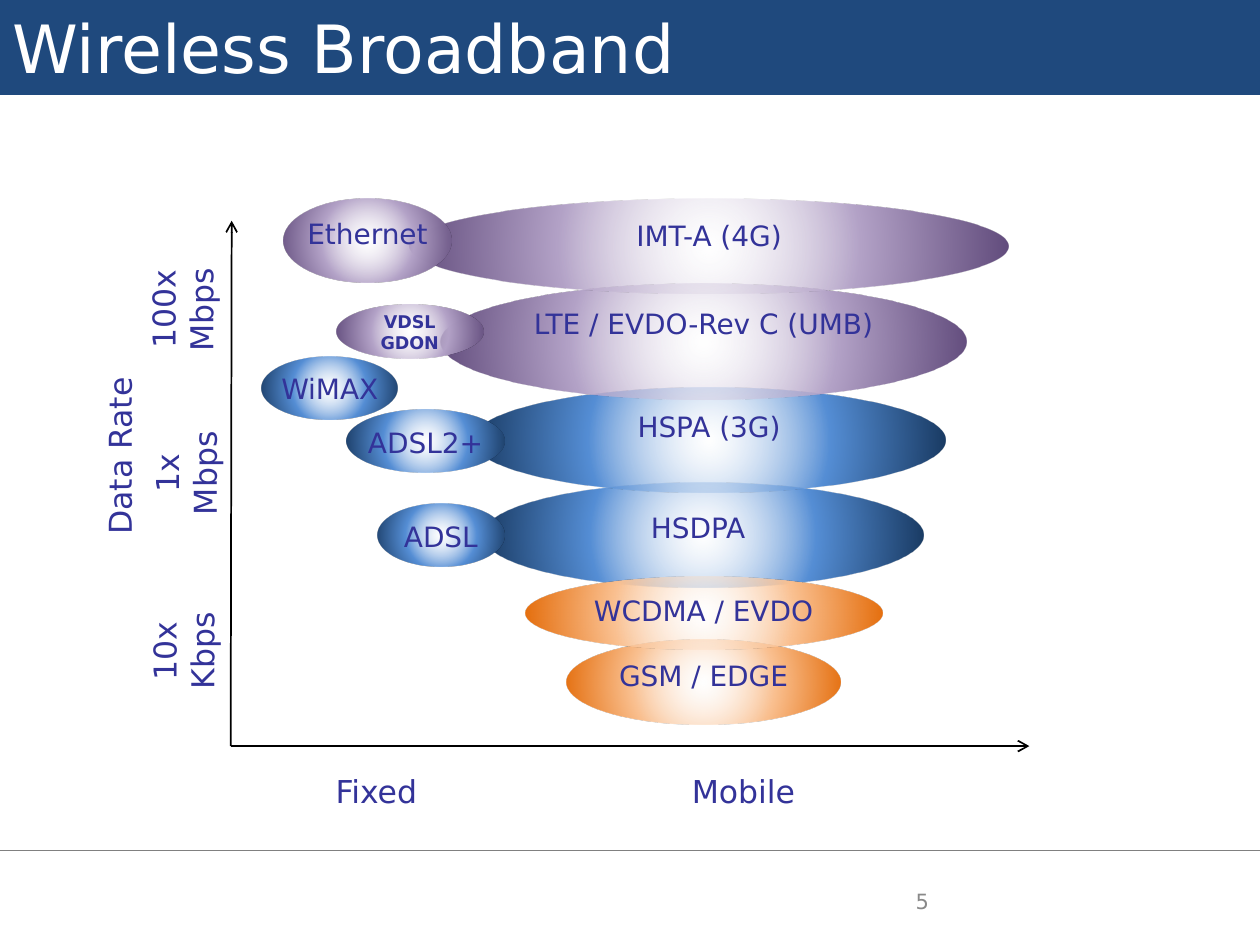
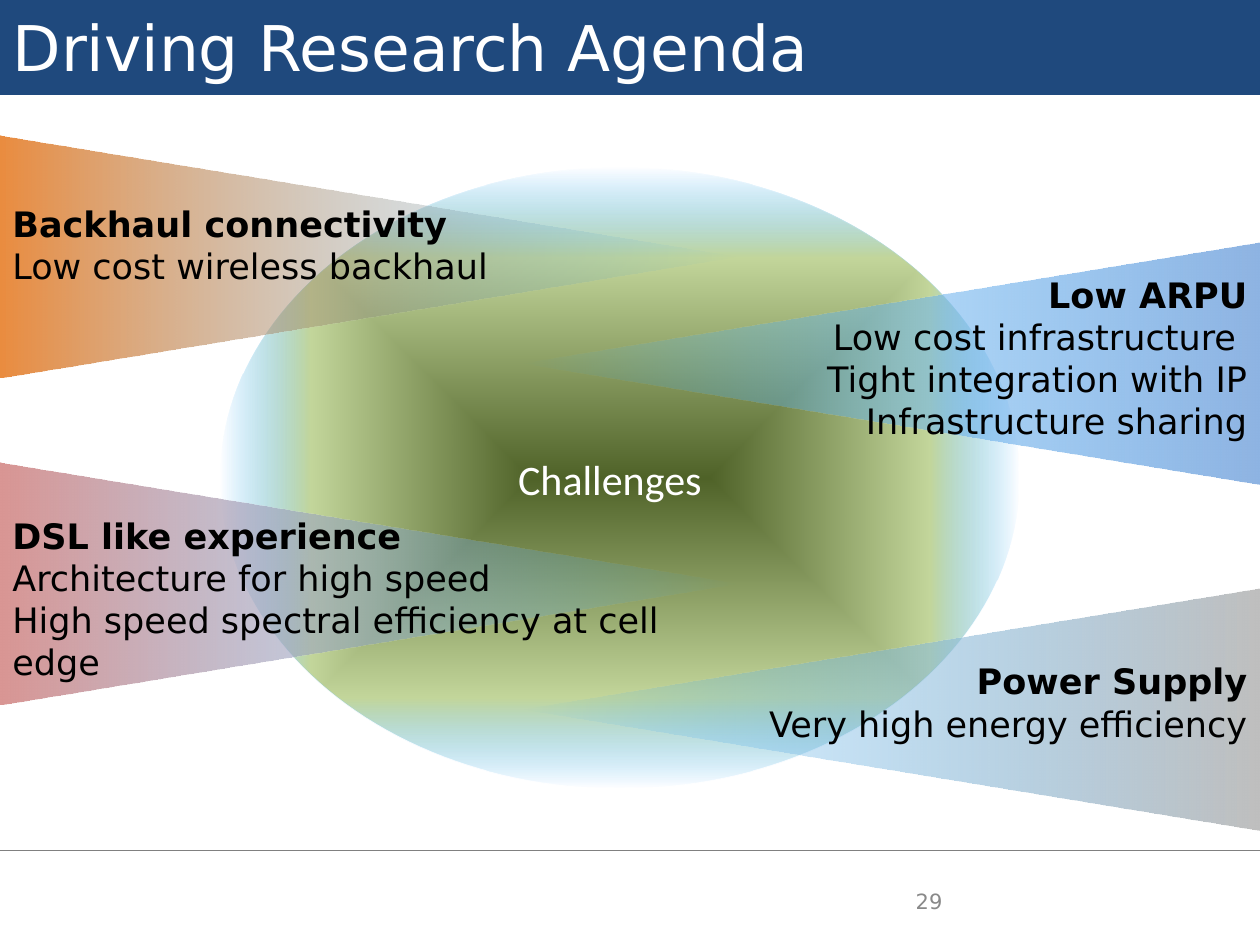
from dataclasses import dataclass

from lxml.etree import SubElement
from pptx import Presentation
from pptx.dml.color import RGBColor
from pptx.enum.shapes import MSO_CONNECTOR, MSO_SHAPE
from pptx.enum.text import MSO_ANCHOR, MSO_AUTO_SIZE, PP_ALIGN
from pptx.oxml import parse_xml
from pptx.oxml.ns import nsdecls, qn
from pptx.util import Cm, Pt

WHITE = RGBColor(0xFF, 0xFF, 0xFF)
BLACK = RGBColor(0x00, 0x00, 0x00)
BAND_BLUE = RGBColor(0x1F, 0x49, 0x7D)
RULE_GREY = RGBColor(0x80, 0x80, 0x80)
NUMBER_GREY = RGBColor(0x89, 0x89, 0x89)
LABEL_INDIGO = RGBColor(0x33, 0x33, 0x99)
SKY = RGBColor(0x43, 0xB3, 0xFF)
PALE_ORANGE = RGBColor(0xFD, 0xEA, 0xDA)
MID_ORANGE = RGBColor(0xFA, 0xC0, 0x90)
ORANGE = RGBColor(0xE4, 0x6C, 0x0A)
PALE_BLUE = RGBColor(0xC6, 0xD9, 0xF1)
MID_BLUE = RGBColor(0x55, 0x8E, 0xD5)
NAVY = RGBColor(0x17, 0x37, 0x5E)
PALE_PURPLE = RGBColor(0xE6, 0xE0, 0xEC)
MID_PURPLE = RGBColor(0xB3, 0xA2, 0xC7)
PURPLE = RGBColor(0x60, 0x4A, 0x7B)
DARK_OLIVE = RGBColor(0x4F, 0x62, 0x28)
LIGHT_OLIVE = RGBColor(0xC3, 0xD6, 0x9B)
SOFT_BLUE = RGBColor(0x8E, 0xB4, 0xE3)
SOFT_RED = RGBColor(0xD9, 0x96, 0x94)
SILVER = RGBColor(0xBF, 0xBF, 0xBF)

FONT = "DejaVu Sans"
SECOND_GENERATION = (PALE_ORANGE, MID_ORANGE, ORANGE)
THIRD_GENERATION = (PALE_BLUE, MID_BLUE, NAVY)
FOURTH_GENERATION = (PALE_PURPLE, MID_PURPLE, PURPLE)

TECHNOLOGIES = [
    ("GSM / EDGE", SECOND_GENERATION, (6.78, 8.9, 5.51, 1.7), None),
    ("HSDPA", THIRD_GENERATION, (5.08, 5.73, 8.89, 2.11), (6.35, 6.16, 6.15, 0.94)),
    ("WCDMA / EVDO", SECOND_GENERATION, (5.94, 7.63, 7.19, 1.47), None),
    ("HSPA (3G)", THIRD_GENERATION, (4.88, 3.82, 9.53, 2.11), None),
    ("ADSL", THIRD_GENERATION, (2.97, 6.16, 2.54, 1.27), None),
    ("ADSL2+", THIRD_GENERATION, (2.34, 4.26, 3.18, 1.27), None),
    ("LTE / EVDO-Rev C (UMB)", FOURTH_GENERATION, (4.24, 1.72, 10.59, 2.34), None),
    ("IMT-A (4G)", FOURTH_GENERATION, (3.61, 0, 12.07, 1.91), None),
    ("VDSL\nGDON", FOURTH_GENERATION, (2.13, 2.15, 2.97, 1.07), (2.34, 2.15, 2.54, 1.12)),
    ("Ethernet", FOURTH_GENERATION, (1.07, 0, 3.38, 1.7), None),
    ("WiMAX", THIRD_GENERATION, (0.63, 3.19, 2.74, 1.27), None),
]
RATE_LABELS = [
    ("10x Kbps", -0.95, 9.12, 3.38, 1.8),
    ("1x Mbps", -0.9, 5.54, 2.97, 1.8),
    ("100x Mbps", -0.97, 2.24, 3.61, 1.8),
    ("Data Rate", -2.24, 5.19, 7.82, 1.02),
]
ACCESS_LABELS = [("Fixed", 1.27, 2.74), ("Mobile", 8.25, 3.38)]


@dataclass
class Box:
    """A rectangle in centimetres."""

    left: float
    top: float
    width: float
    height: float

    def inner(self, left, top, width, height):
        """Return a box given relative to this one's corner."""
        return Box(self.left + left, self.top + top, width, height)

    def turned(self):
        """Return the box that covers this one after a quarter turn."""
        shift = (self.width - self.height) / 2
        return Box(self.left + shift, self.top - shift, self.height, self.width)

    def lengths(self):
        """Return the position and size as lengths."""
        return Cm(self.left), Cm(self.top), Cm(self.width), Cm(self.height)


CHALLENGES = [
    (Box(0, 2.74, 14.88, 4.88), ORANGE, 78, (0, 1.22, 10.19, 1.96),
     "Backhaul connectivity\nLow cost wireless backhaul", False),
    (Box(10.52, 4.88, 14.88, 4.88), SOFT_BLUE, 100, (-0.79, 0.5, 15.67, 3.68),
     "Low ARPU\nLow cost infrastructure \nTight integration with IP\nInfrastructure sharing", True),
    (Box(0, 9.32, 14.88, 4.88), SOFT_RED, 100, (0, 0.92, 15.44, 2.82),
     "DSL like experience\nArchitecture for high speed\nHigh speed spectral efficiency at cell edge", False),
    (Box(10.52, 11.86, 14.88, 4.88), SILVER, 100, (2.18, 1.32, 12.7, 1.96),
     "Power Supply\nVery high energy efficiency", True),
]


def write(shape, text, size=16, color=LABEL_INDIGO, font=FONT, bold=False,
          align=PP_ALIGN.LEFT, anchor=MSO_ANCHOR.TOP, wrap=True):
    """Fill a shape with formatted text, one paragraph a line."""
    frame = shape.text_frame
    frame.text = text
    frame.word_wrap = wrap
    frame.auto_size = MSO_AUTO_SIZE.NONE
    frame.vertical_anchor = anchor
    for paragraph in frame.paragraphs:
        paragraph.alignment = align
        for run in paragraph.runs:
            run.font.name = font
            run.font.size = Pt(size)
            run.font.bold = bold
            run.font.color.rgb = color


def add_text(shapes, box, text, **text_format):
    """Add a text box with formatted text."""
    text_box = shapes.add_textbox(*box.lengths())
    write(text_box, text, **text_format)
    return text_box


def add_plain_shape(shapes, kind, box):
    """Add a preset shape with no shadow, fill or outline."""
    shape = shapes.add_shape(kind, *box.lengths())
    shape.shadow.inherit = False
    shape.fill.background()
    shape.line.fill.background()
    return shape


def fill_gradient(shape, stops, path_kind=None):
    """Fill with (position, colour, opacity) stops, upward or from the centre."""
    stop_xml = "".join(
        f'<a:gs pos="{position * 1000}"><a:srgbClr val="{color}">'
        f'<a:alpha val="{opacity * 1000}"/></a:srgbClr></a:gs>'
        for position, color, opacity in stops)
    direction = '<a:lin ang="16200000" scaled="0"/>'
    if path_kind:
        direction = (f'<a:path path="{path_kind}"><a:fillToRect l="50000" t="50000" '
                     'r="50000" b="50000"/></a:path>')
    gradient = parse_xml(f'<a:gradFill {nsdecls("a")} rotWithShape="1">'
                         f'<a:gsLst>{stop_xml}</a:gsLst>{direction}</a:gradFill>')
    properties = shape.element.spPr
    properties.replace(properties.find(qn("a:noFill")), gradient)


def add_line(shapes, start, end, color, width, arrow=False):
    """Add a straight line between two points in centimetres."""
    line = shapes.add_connector(MSO_CONNECTOR.STRAIGHT, *map(Cm, (*start, *end)))
    line.line.color.rgb = color
    line.line.width = Pt(width)
    properties = line.element.spPr
    if arrow:
        SubElement(properties.find(qn("a:ln")), qn("a:tailEnd"), type="arrow")
    SubElement(properties, qn("a:effectLst"))
    return line


def decorate_layout(layout, slide):
    """Give the layout its title place, band and footer rule, drawn by way of a slide."""
    title = layout.placeholders[0]
    title.left, title.top, title.width, title.height = Box(0, 0, 25.4, 1.88).lengths()
    band = add_plain_shape(slide.shapes, MSO_SHAPE.RECTANGLE, Box(0, 0, 25.4, 1.91))
    band.fill.solid()
    band.fill.fore_color.rgb = BAND_BLUE
    band.line.color.rgb = BAND_BLUE
    band.line.width = Pt(0.75)
    rule = add_line(slide.shapes, (0, 17.15), (25.4, 17.15), RULE_GREY, 0.75)
    for part in (band, rule):
        layout.shapes.element.insert(2, part.element)


def add_heading(slide, title, size, number):
    """Write the slide title and slide number."""
    write(slide.shapes.title, title, size=size, color=WHITE, anchor=MSO_ANCHOR.MIDDLE)
    add_text(slide.shapes, Box(18.21, 17.65, 5.92, 1.02), number, size=12,
             color=NUMBER_GREY, anchor=MSO_ANCHOR.MIDDLE)


def add_axes(shapes, plot):
    """Draw both arrows and their labels around the plot box."""
    bottom = plot.top + plot.height
    origin = (plot.left, bottom)
    add_line(shapes, origin, (plot.left + plot.width, bottom), BLACK, 1, arrow=True)
    add_line(shapes, origin, (plot.left + 0.02, plot.top + 0.45), BLACK, 1, arrow=True)
    for text, center_x, center_y, width, height in RATE_LABELS:
        box = plot.inner(center_x - width / 2, center_y - height / 2, width, height)
        label = add_text(shapes, box, text, size=18, align=PP_ALIGN.CENTER)
        label.rotation = 270
    for text, left, width in ACCESS_LABELS:
        add_text(shapes, plot.inner(left, plot.height + 0.4, width, 1.02), text,
                 size=18, align=PP_ALIGN.RIGHT)


def add_technologies(shapes, plot):
    """Draw the overlapping technology ellipses inside the plot box."""
    for name, (pale, middle, dark), place, label_place in TECHNOLOGIES:
        ellipse = add_plain_shape(shapes, MSO_SHAPE.OVAL, plot.inner(*place))
        fill_gradient(ellipse, [(0, pale, 0), (50, middle, 100), (100, dark, 100)], "circle")
        if label_place is None:
            write(ellipse, name, align=PP_ALIGN.CENTER, wrap=False)
        else:
            small = "\n" in name
            add_text(shapes, plot.inner(*label_place), name, size=10 if small else 16,
                     bold=small, align=PP_ALIGN.CENTER)


def add_center(slide, box):
    """Draw the glowing oval with its caption."""
    shapes = slide.shapes.add_group_shape().shapes
    oval = add_plain_shape(shapes, MSO_SHAPE.OVAL, box)
    fill_gradient(oval, [(0, DARK_OLIVE, 100), (71, LIGHT_OLIVE, 100), (100, SKY, 0)], "shape")
    add_text(shapes, box.inner(5.28, 5.64, 5.13, 1.57), "Challenges", size=24,
             color=WHITE, font="Calibri", align=PP_ALIGN.CENTER, wrap=False)


def add_challenge(slide, box, color, opacity, text_place, text, from_right):
    """Draw a wedge that points to the centre, with its heading and points."""
    shapes = slide.shapes.add_group_shape().shapes
    wedge = add_plain_shape(shapes, MSO_SHAPE.ISOSCELES_TRIANGLE, box.turned())
    wedge.rotation = 270 if from_right else 90
    fill_gradient(wedge, [(0, color, opacity), (100, SKY, 0)])
    label = add_text(shapes, box.inner(*text_place), text, size=20, color=BLACK,
                     align=PP_ALIGN.RIGHT if from_right else PP_ALIGN.LEFT)
    heading, *points = label.text_frame.paragraphs
    heading.runs[0].font.bold = True
    for point in points:
        point.level = 1 if from_right else 0


def build_broadband_slide(slide):
    """Build the chart of data rates against access types."""
    add_heading(slide, "Wireless Broadband", 38, "5")
    plot = Box(4.65, 4, 16.1, 11.04)
    add_axes(slide.shapes, plot)
    add_technologies(slide.shapes, plot)


def build_agenda_slide(slide):
    """Build the challenges around the central oval."""
    add_heading(slide, "Driving Research Agenda", 36, "29")
    add_center(slide, Box(4.45, 3.38, 16.08, 12.5))
    for challenge in CHALLENGES:
        add_challenge(slide, *challenge)


def main():
    """Build and save the presentation."""
    presentation = Presentation()
    presentation.slide_width, presentation.slide_height = Cm(25.4), Cm(19.05)
    layout = presentation.slide_layouts[5]
    broadband_slide, agenda_slide = (presentation.slides.add_slide(layout) for _ in range(2))
    decorate_layout(layout, broadband_slide)
    build_broadband_slide(broadband_slide)
    build_agenda_slide(agenda_slide)
    presentation.save("out.pptx")


if __name__ == "__main__":
    main()
